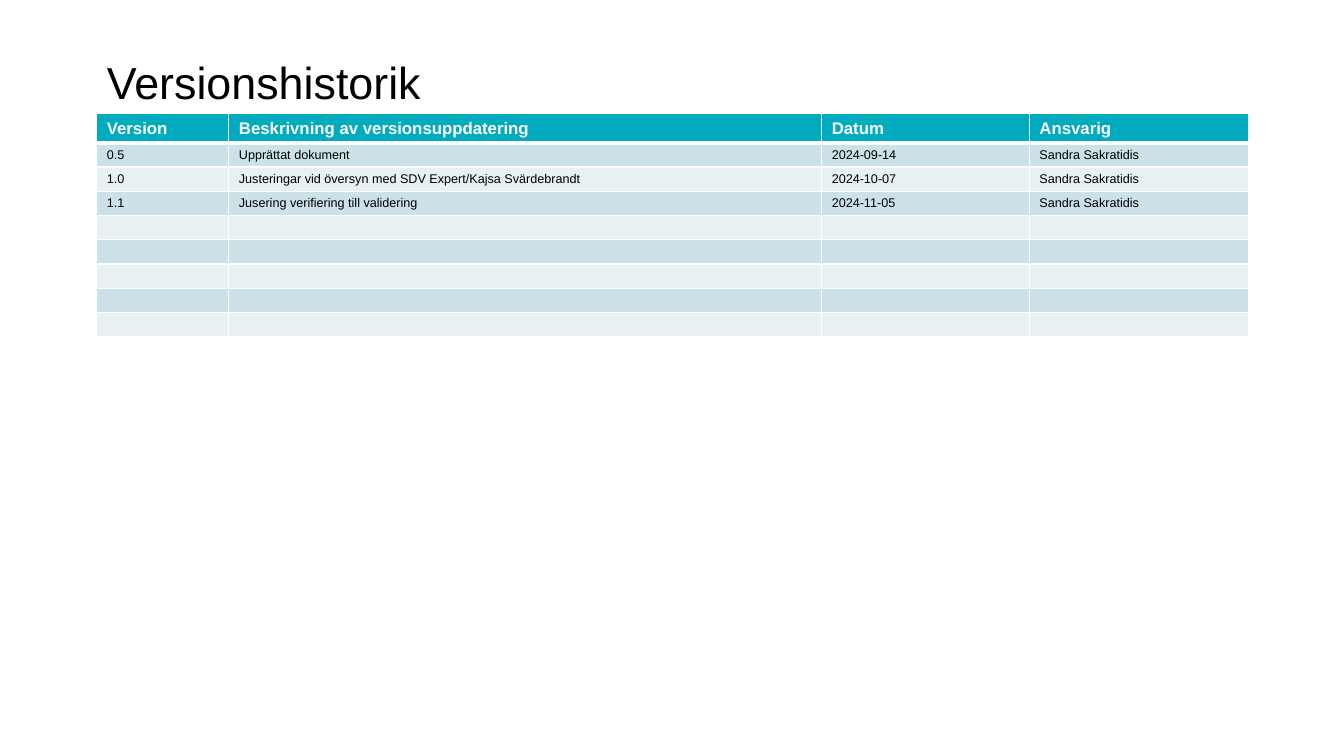
from dataclasses import dataclass

import pptx
import pptx.dml.color
import pptx.enum.text
import pptx.oxml
import pptx.oxml.ns
import pptx.util
from pptx.util import Inches


@dataclass(frozen=True)
class Theme:
    font: str = "Arial"
    title_size: int = 32
    header_size: int = 12
    body_size: int = 9
    text: str = "000000"
    white: str = "FFFFFF"
    header_fill: str = "00ABC0"
    bands: tuple[str, str] = ("CCE2E8", "E7F1F4")
    border: int = 1
    header_rule: int = 3


@dataclass(frozen=True)
class Column:
    heading: str
    width: float
    anchor: pptx.enum.text.MSO_ANCHOR


@dataclass(frozen=True)
class Version:
    number: str = ""
    description: str = ""
    date: str = ""
    owner: str = ""

    def texts(self) -> list[str]:
        return [self.number, self.description, self.date, self.owner]


THEME = Theme()
LEFT, WIDTH = 0.96, 11.42
TABLE_TOP, HEADER_HEIGHT, ROW_HEIGHT = 1.13, 0.28, 0.24
TOP, MIDDLE = pptx.enum.text.MSO_ANCHOR.TOP, pptx.enum.text.MSO_ANCHOR.MIDDLE

COLUMNS = [
    Column("Version", 1.31, MIDDLE),
    Column("Beskrivning av versionsuppdatering", 5.88, TOP),
    Column("Datum", 2.06, MIDDLE),
    Column("Ansvarig", 2.17, TOP),
]
VERSIONS = [
    Version("0.5", "Upprättat dokument", "2024-09-14", "Sandra Sakratidis"),
    Version("1.0", "Justeringar vid översyn med SDV Expert/Kajsa Svärdebrandt",
            "2024-10-07", "Sandra Sakratidis"),
    Version("1.1", "Jusering verifiering till validering", "2024-11-05", "Sandra Sakratidis"),
]
EMPTY_ROWS = 5


def style_font(paragraph, size: int, color: str, bold: bool = False) -> None:
    paragraph.font.name = THEME.font
    paragraph.font.size = pptx.util.Pt(size)
    paragraph.font.bold = bold
    paragraph.font.color.rgb = pptx.dml.color.RGBColor.from_string(color)


def add_borders(cell, top: int, bottom: int) -> None:
    """Draw white cell borders; the line elements precede the fill."""
    properties = cell._tc.get_or_add_tcPr()
    widths = {"lnL": THEME.border, "lnR": THEME.border, "lnT": top, "lnB": bottom}
    for position, (side, width) in enumerate(widths.items()):
        properties.insert(position, pptx.oxml.parse_xml(
            f'<a:{side} {pptx.oxml.ns.nsdecls("a")} w="{pptx.util.Pt(width)}">'
            f'<a:solidFill><a:srgbClr val="{THEME.white}"/></a:solidFill></a:{side}>'))


def fill_cell(cell, text: str, row: int, anchor) -> None:
    header = row == 0
    size = THEME.header_size if header else THEME.body_size
    cell.text = text
    cell.vertical_anchor = TOP if header else anchor
    paragraph = cell.text_frame.paragraphs[0]
    style_font(paragraph, size, THEME.white if header else THEME.text, header)
    if not text:  # the end mark sets the height of an empty row
        paragraph._p.append(pptx.oxml.parse_xml(
            f'<a:endParaRPr {pptx.oxml.ns.nsdecls("a")} sz="{size * 100}"/>'))
    cell.fill.solid()
    color = THEME.header_fill if header else THEME.bands[(row - 1) % 2]
    cell.fill.fore_color.rgb = pptx.dml.color.RGBColor.from_string(color)
    add_borders(cell, THEME.header_rule if row == 1 else THEME.border,
                THEME.header_rule if header else THEME.border)


def add_title(slide, text: str) -> None:
    title = slide.shapes.title
    title.left, title.top = Inches(LEFT), Inches(0.43)
    title.width, title.height = Inches(WIDTH), Inches(0.47)
    frame = title.text_frame
    frame.text = text
    frame.auto_size = pptx.enum.text.MSO_AUTO_SIZE.NONE
    frame.vertical_anchor = TOP
    frame.margin_top, frame.margin_bottom = Inches(0.11), 0
    frame.paragraphs[0].alignment = pptx.enum.text.PP_ALIGN.LEFT
    style_font(frame.paragraphs[0], THEME.title_size, THEME.text)


def add_history(slide, versions: list[Version]) -> None:
    rows = [[column.heading for column in COLUMNS]] + [v.texts() for v in versions]
    height = HEADER_HEIGHT + ROW_HEIGHT * len(versions)
    history = slide.shapes.add_table(len(rows), len(COLUMNS), Inches(LEFT), Inches(TABLE_TOP),
                                     Inches(WIDTH), Inches(height)).table
    for index, column in enumerate(COLUMNS):
        history.columns[index].width = Inches(column.width)
    for row, texts in enumerate(rows):
        history.rows[row].height = Inches(ROW_HEIGHT if row else HEADER_HEIGHT)
        for index, (text, column) in enumerate(zip(texts, COLUMNS)):
            fill_cell(history.cell(row, index), text, row, column.anchor)


def main() -> None:
    presentation = pptx.Presentation()
    presentation.slide_width, presentation.slide_height = Inches(13.33), Inches(7.5)
    # Title Only layout
    slide = presentation.slides.add_slide(presentation.slide_layouts[5])
    add_title(slide, "Versionshistorik")
    add_history(slide, VERSIONS + [Version()] * EMPTY_ROWS)
    presentation.save("out.pptx")


if __name__ == "__main__":
    main()
